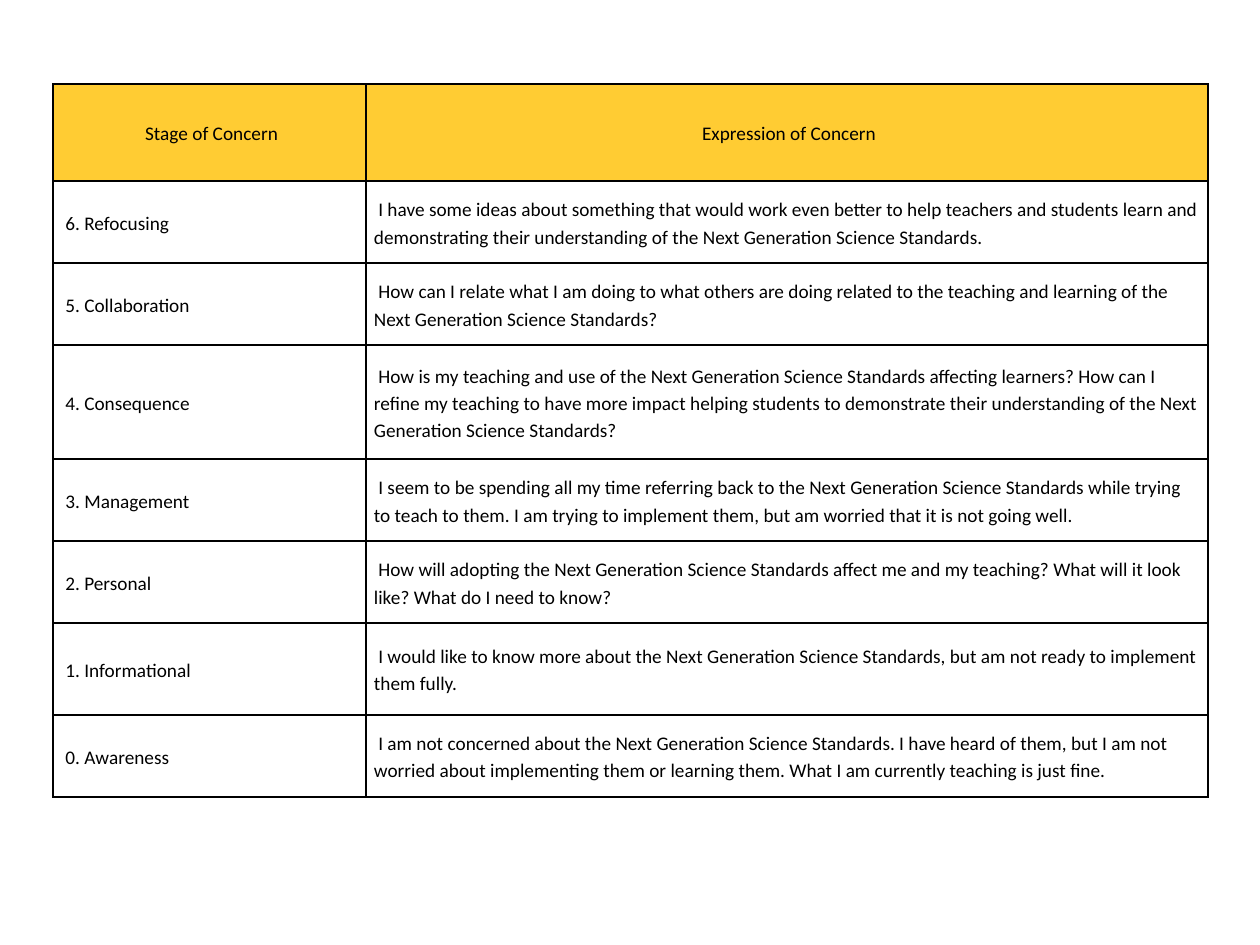
from lxml import etree
from pptx import Presentation, util as u
from pptx.dml.color import RGBColor
from pptx.enum import text
from pptx.oxml.ns import qn

HEAD = ("Stage of Concern", "Expression of Concern")
STAGES = [
    ("Refocusing", "I have some ideas about something that would work even better to help teachers and students learn and demonstrating their understanding of the Next Generation Science Standards."),
    ("Collaboration", "How can I relate what I am doing to what others are doing related to the teaching and learning of the Next Generation Science Standards?"),
    ("Consequence", "How is my teaching and use of the Next Generation Science Standards affecting learners? How can I refine my teaching to have more impact helping students to demonstrate their understanding of the Next Generation Science Standards?"),
    ("Management", "I seem to be spending all my time referring back to the Next Generation Science Standards while trying to teach to them. I am trying to implement them, but am worried that it is not going well."),
    ("Personal", "How will adopting the Next Generation Science Standards affect me and my teaching? What will it look like? What do I need to know?"),
    ("Informational", "I would like to know more about the Next Generation Science Standards, but am not ready to implement them fully."),
    ("Awareness", "I am not concerned about the Next Generation Science Standards. I have heard of them, but I am not worried about implementing them or learning them. What I am currently teaching is just fine."),
]
THEME = {"font": "Calibri", "size": 11, "ink": "000000", "head": "FFCC33", "rule": 1}
PAGE = (1260, 945)
SPOT = (53, 84)
COLS = (313, 842)
ROWS = (97, 82, 82, 114, 82, 82, 92, 82)
PAD = 8
NBSP = " "


def px(n):
    return u.Emu(round(n * 914400 / 126))


CELL = {"vertical_anchor": text.MSO_ANCHOR.MIDDLE}
CELL.update({f"margin_{side}": px(PAD) for side in ("left", "right", "top", "bottom")})
FONT = {"name": THEME["font"], "size": u.Pt(THEME["size"]), "bold": False}


def apply(item, look):
    for key, val in look.items():
        setattr(item, key, val)


def border(cell):
    props = cell._tc.get_or_add_tcPr()
    for side in "LRTB":
        line = etree.SubElement(props, qn(f"a:ln{side}"), w=str(u.Pt(THEME["rule"])))
        fill = etree.SubElement(line, qn("a:solidFill"))
        etree.SubElement(fill, qn("a:srgbClr"), val=THEME["ink"])


def write(cell, words, head):
    apply(cell, CELL)
    border(cell)
    if head:
        cell.fill.solid()
        cell.fill.fore_color.rgb = RGBColor.from_string(THEME["head"])
    else:
        cell.fill.background()
    para = cell.text_frame.paragraphs[0]
    align = text.PP_ALIGN.CENTER if head else text.PP_ALIGN.LEFT
    apply(para, {"line_spacing": 1.15, "alignment": align})
    run = para.add_run()
    run.text = NBSP + words
    apply(run.font, FONT)
    run.font.color.rgb = RGBColor.from_string(THEME["ink"])


def main():
    deck = Presentation()
    deck.slide_width, deck.slide_height = map(px, PAGE)
    slide = deck.slides.add_slide(deck.slide_layouts[6])
    top = len(STAGES) - 1
    data = [HEAD] + [(f"{top - i}. {name}", quote) for i, (name, quote) in enumerate(STAGES)]
    box = map(px, (*SPOT, sum(COLS), sum(ROWS)))
    table = slide.shapes.add_table(len(data), len(HEAD), *box).table
    apply(table, {"first_row": False, "horz_banding": False})
    for col, wide in zip(table.columns, COLS):
        col.width = px(wide)
    for r, (row, tall) in enumerate(zip(table.rows, ROWS)):
        row.height = px(tall)
        for cell, words in zip(row.cells, data[r]):
            write(cell, words, r == 0)
    deck.save("out.pptx")


if __name__ == "__main__":
    main()
